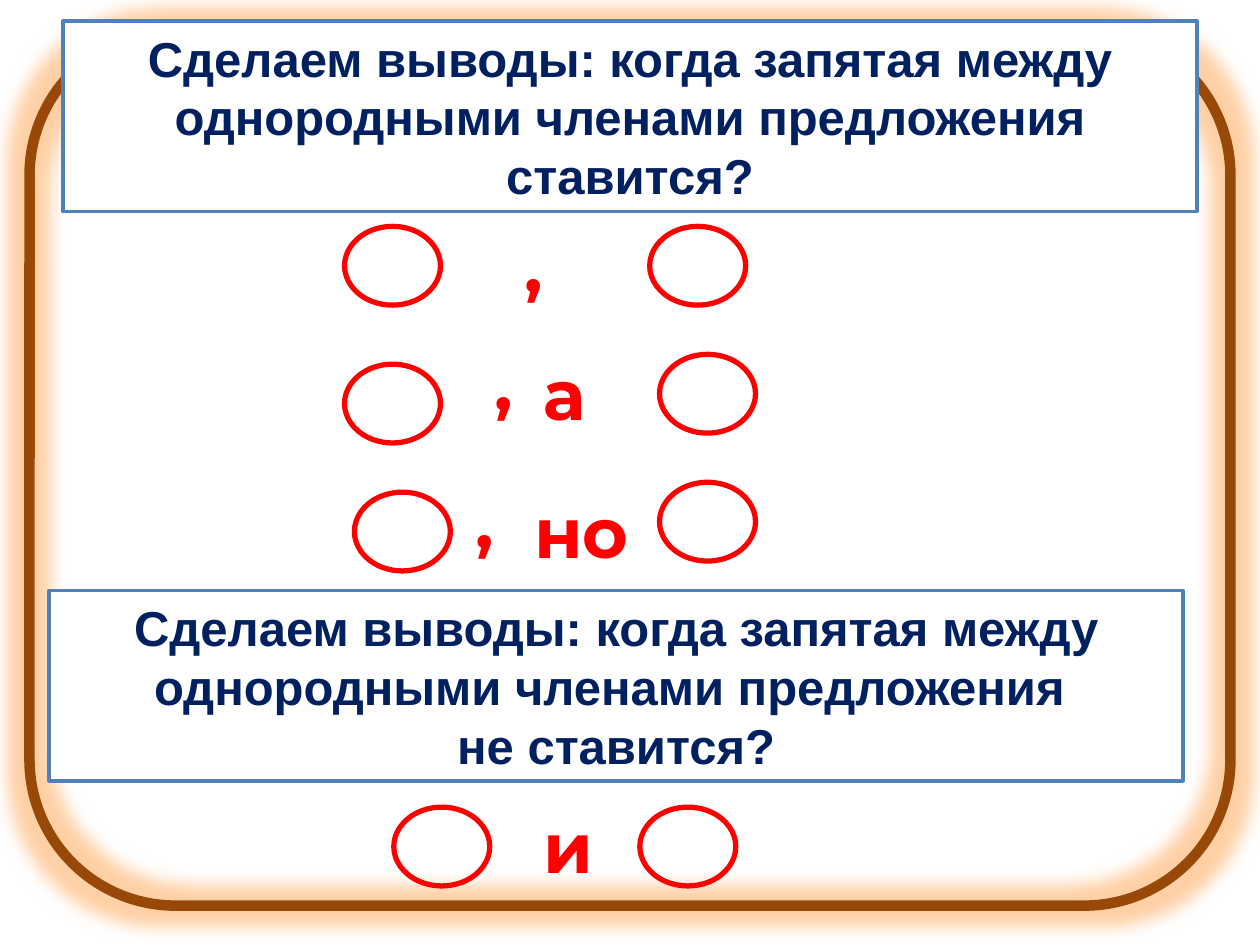
from dataclasses import dataclass

from lxml.etree import SubElement
from pptx import Presentation
from pptx.dml.color import RGBColor
from pptx.enum.shapes import MSO_SHAPE as Shape
from pptx.enum.text import MSO_ANCHOR as Anchor, PP_ALIGN as Align
from pptx.oxml.ns import qn
from pptx.util import Inches, Pt


@dataclass(frozen=True)
class Theme:
    frame: str = "984807"
    glow: str = "FF8A1F"
    panel_line: str = "4F81BD"
    panel_fill: str = "FFFFFF"
    heading: str = "002060"
    mark: str = "FF0000"
    heading_font: str = "Arial"
    mark_font: str = "Montserrat"
    heading_size: int = 28
    mark_size: int = 40


@dataclass(frozen=True)
class Box:
    col: float
    row: float
    cols: float
    rows: float


@dataclass(frozen=True)
class Member:
    col: float
    row: float


@dataclass(frozen=True)
class Mark:
    text: str
    col: float
    row: float
    cols: float


THEME = Theme()
WIDTH, HEIGHT = Inches(10), Inches(7.5)
COLS, ROWS = 128, 96
FRAME = Box(3, 3, 122, 89)
PANEL_COLS, PANEL_ROWS = 115.2, 19.33
MEMBER_COLS, MEMBER_ROWS = 9.75, 8
MARK_ROWS = 9.85

QUESTIONS = [
    (6.4, 2.15, ["Сделаем выводы: когда запятая между однородными членами предложения ставится?"]),
    (5, 60, ["Сделаем выводы: когда запятая между однородными членами предложения ", "не ставится?"]),
]
MEMBERS = [
    Member(35, 23), Member(66, 23),
    Member(35, 37), Member(67, 36),
    Member(36, 50), Member(67, 49),
    Member(40, 82), Member(65, 82),
]
MARKS = [
    Mark(",", 52, 22, 5),
    Mark(",", 49, 34, 5), Mark("а", 54, 35, 7.4),
    Mark(",", 47, 48, 5), Mark("но", 53, 49, 12.5),
    Mark("и", 54, 81, 7.7),
]


def place(box: Box) -> tuple[int, int, int, int]:
    return (round(WIDTH * box.col / COLS), round(HEIGHT * box.row / ROWS),
            round(WIDTH * box.cols / COLS), round(HEIGHT * box.rows / ROWS))


def draw_shape(slide, kind, box: Box, line: str, weight: float, fill: str | None = None):
    shape = slide.shapes.add_shape(kind, *place(box))
    shape.shadow.inherit = False
    shape.line.color.rgb = RGBColor.from_string(line)
    shape.line.width = Pt(weight)
    if fill:
        shape.fill.solid()
        shape.fill.fore_color.rgb = RGBColor.from_string(fill)
    else:
        shape.fill.background()
    return shape


def write(shape, paragraphs: list[str], *, font: str, size: int, color: str,
          align=Align.LEFT, anchor=Anchor.TOP, wrap: bool = True) -> None:
    frame = shape.text_frame
    frame.word_wrap = wrap
    frame.vertical_anchor = anchor
    for index, text in enumerate(paragraphs):
        paragraph = frame.add_paragraph() if index else frame.paragraphs[0]
        paragraph.alignment = align
        run = paragraph.add_run()
        run.text = text
        run.font.name = font
        run.font.size = Pt(size)
        run.font.bold = True
        run.font.color.rgb = RGBColor.from_string(color)


def add_glow(shape, color: str, radius: float, opacity: int) -> None:
    effects = shape.element.spPr.find(qn("a:effectLst"))
    glow = SubElement(effects, qn("a:glow"), rad=str(Pt(radius)))
    tint = SubElement(glow, qn("a:srgbClr"), val=color)
    SubElement(tint, qn("a:alpha"), val=str(opacity * 1000))


def draw_question(slide, col: float, row: float, paragraphs: list[str]) -> None:
    panel = draw_shape(slide, Shape.RECTANGLE, Box(col, row, PANEL_COLS, PANEL_ROWS),
                       THEME.panel_line, 2, THEME.panel_fill)
    write(panel, paragraphs, font=THEME.heading_font, size=THEME.heading_size,
          color=THEME.heading, align=Align.CENTER, anchor=Anchor.MIDDLE)


def draw_member(slide, member: Member) -> None:
    draw_shape(slide, Shape.OVAL, Box(member.col, member.row, MEMBER_COLS, MEMBER_ROWS),
               THEME.mark, 3)


def draw_mark(slide, mark: Mark) -> None:
    label = slide.shapes.add_textbox(*place(Box(mark.col, mark.row, mark.cols, MARK_ROWS)))
    write(label, [mark.text], font=THEME.mark_font, size=THEME.mark_size,
          color=THEME.mark, wrap=False)


def main() -> None:
    deck = Presentation()
    deck.slide_width, deck.slide_height = WIDTH, HEIGHT
    slide = deck.slides.add_slide(deck.slide_layouts[6])
    border = draw_shape(slide, Shape.ROUNDED_RECTANGLE, FRAME, THEME.frame, 6)
    add_glow(border, THEME.glow, 18, 40)
    for question in QUESTIONS:
        draw_question(slide, *question)
    for member in MEMBERS:
        draw_member(slide, member)
    for mark in MARKS:
        draw_mark(slide, mark)
    deck.save("out.pptx")


if __name__ == "__main__":
    main()
